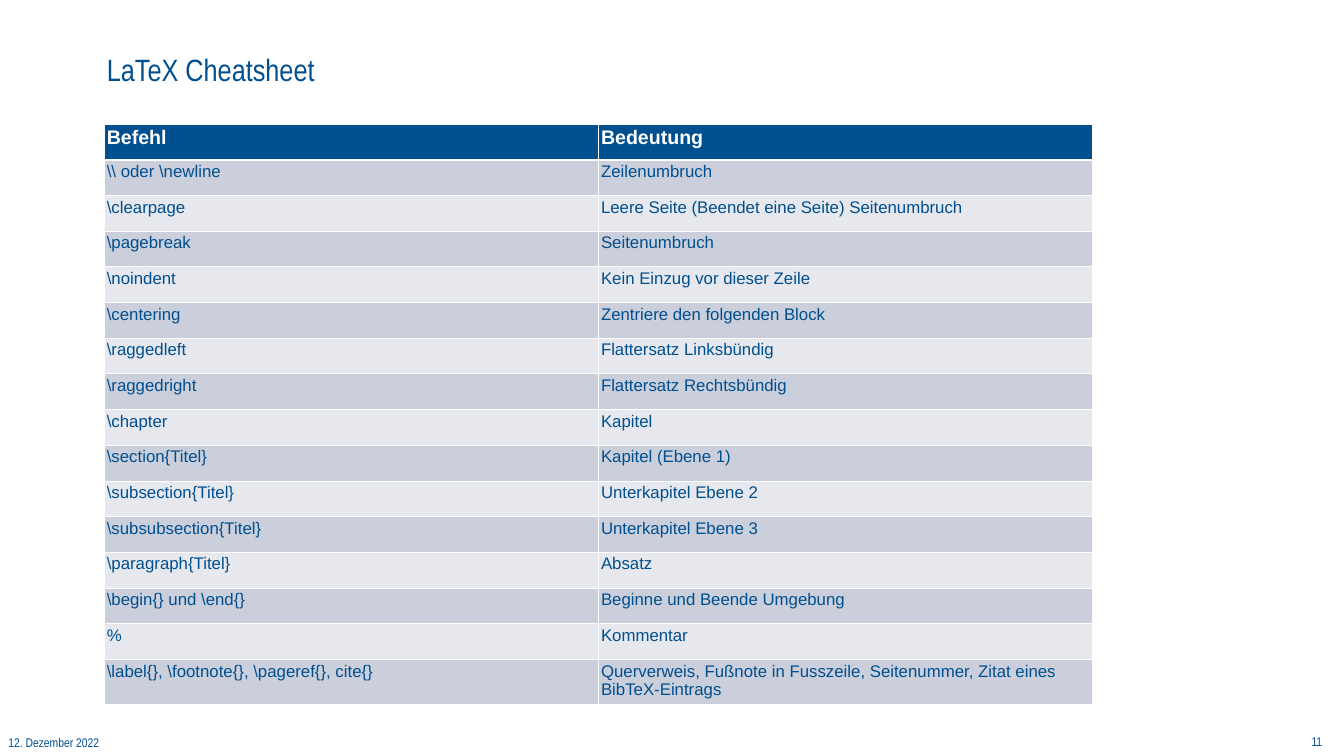
from lxml import etree
from pptx import Presentation
from pptx.dml.color import RGBColor
from pptx.enum import text
from pptx.oxml import ns
from pptx.util import Pt

COLORS = {
    "blue": "004F8F",
    "white": "FFFFFF",
    "dark_band": "CACFDB",
    "light_band": "E6E8EE",
}
INSET = 3.6
ROW_HEIGHT = 51
COLUMN_WIDTH = 706
COMMANDS = [
    ("Befehl", "Bedeutung"),
    (r"\\ oder \newline", "Zeilenumbruch"),
    (r"\clearpage", "Leere Seite (Beendet eine Seite) Seitenumbruch"),
    (r"\pagebreak", "Seitenumbruch"),
    (r"\noindent", "Kein Einzug vor dieser Zeile"),
    (r"\centering", "Zentriere den folgenden Block"),
    (r"\raggedleft", "Flattersatz Linksbündig"),
    (r"\raggedright", "Flattersatz Rechtsbündig"),
    (r"\chapter", "Kapitel"),
    (r"\section{Titel}", "Kapitel (Ebene 1)"),
    (r"\subsection{Titel}", "Unterkapitel Ebene 2"),
    (r"\subsubsection{Titel}", "Unterkapitel Ebene 3"),
    (r"\paragraph{Titel}", "Absatz"),
    (r"\begin{} und \end{}", "Beginne und Beende Umgebung"),
    ("%", "Kommentar"),
    (r"\label{}, \footnote{}, \pageref{}, cite{}",
     "Querverweis, Fußnote in Fusszeile, Seitenummer, Zitat eines BibTeX-Eintrags"),
]


def color(name):
    return RGBColor.from_string(COLORS[name])


def set_font(para, name, size, tint, bold=False):
    para.font.name = name
    para.font.size = Pt(size)
    para.font.bold = bold
    para.font.color.rgb = color(tint)


def set_insets(target, inset):
    target.margin_left = target.margin_right = Pt(inset)
    target.margin_top = target.margin_bottom = Pt(inset)


def add_label(page, words, place, size, inset=INSET, wrap=False,
              align=text.PP_ALIGN.LEFT, anchor=text.MSO_ANCHOR.TOP):
    box = page.shapes.add_textbox(*map(Pt, place))
    frame = box.text_frame
    frame.word_wrap = wrap
    frame.vertical_anchor = anchor
    set_insets(frame, inset)
    para = frame.paragraphs[0]
    para.text = words
    para.alignment = align
    set_font(para, "Arial Narrow", size, "blue")


def set_borders(cell, top, bottom):
    properties = cell._tc.get_or_add_tcPr()
    for side, width in (("L", 1), ("R", 1), ("T", top), ("B", bottom)):
        line = etree.SubElement(properties, ns.qn("a:ln" + side), w=str(Pt(width)))
        fill = etree.SubElement(line, ns.qn("a:solidFill"))
        etree.SubElement(fill, ns.qn("a:srgbClr"), val=COLORS["white"])


def fill_cell(cell, words, row):
    header = row == 0
    band = "blue" if header else "dark_band" if row % 2 else "light_band"
    set_borders(cell, 3 if row == 1 else 1, 3 if header else 1)
    cell.fill.solid()
    cell.fill.fore_color.rgb = color(band)
    set_insets(cell, INSET)
    cell.text = words
    set_font(cell.text_frame.paragraphs[0], "Arial", 28 if header else 24,
             "white" if header else "blue", header)


def add_command_table(page, left, top):
    frame = page.shapes.add_table(
        len(COMMANDS), 2, Pt(left), Pt(top),
        Pt(2 * COLUMN_WIDTH), Pt(len(COMMANDS) * ROW_HEIGHT))
    table = frame.table
    for column in table.columns:
        column.width = Pt(COLUMN_WIDTH)
    for row, entries in enumerate(COMMANDS):
        table.rows[row].height = Pt(ROW_HEIGHT)
        for column, words in enumerate(entries):
            fill_cell(table.cell(row, column), words, row)


def main():
    deck = Presentation()
    deck.slide_width, deck.slide_height = Pt(1920), Pt(1080)
    page = deck.slides.add_slide(deck.slide_layouts[6])
    add_label(page, "12. Dezember 2022", (12, 1050.5, 130, 21), 18, inset=0)
    add_label(page, "11", (1868.5, 1045, 24, 28), 18, align=text.PP_ALIGN.RIGHT)
    add_command_table(page, 149, 177)
    add_label(page, "LaTeX Cheatsheet", (149, 16, 1486, 113), 44,
              wrap=True, anchor=text.MSO_ANCHOR.BOTTOM)
    deck.save("out.pptx")


if __name__ == "__main__":
    main()
